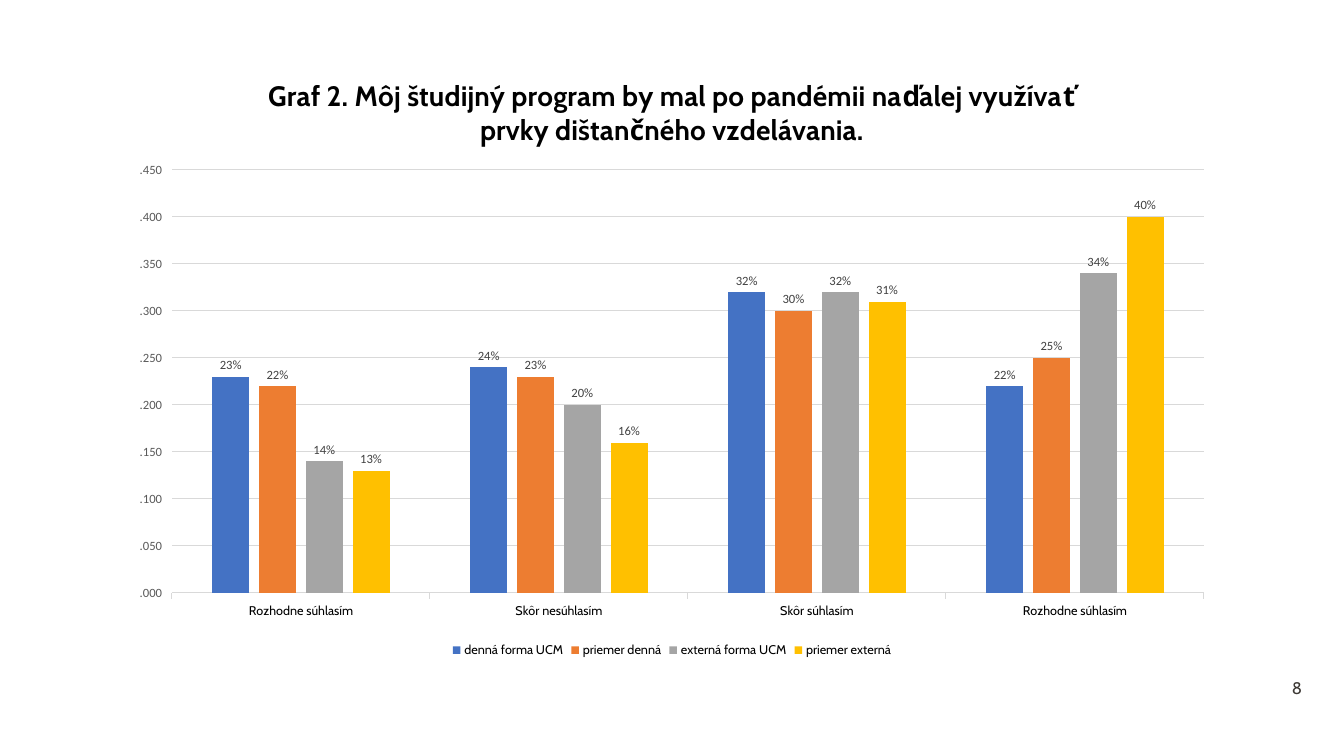
from lxml.etree import fromstring
from pptx import Presentation
from pptx.chart.data import CategoryChartData as Data
from pptx.dml.color import RGBColor as Rgb
from pptx.enum.chart import XL_CHART_TYPE as Kind
from pptx.enum.chart import XL_LABEL_POSITION as Spot
from pptx.enum.chart import XL_LEGEND_POSITION as Side
from pptx.enum.chart import XL_TICK_MARK as Tick
from pptx.enum.text import MSO_ANCHOR as Anchor
from pptx.enum.text import PP_ALIGN as Align
from pptx.oxml.ns import nsdecls
from pptx.util import Pt

SCALE = 914400 / 100.8
HUES = {
    "black": "000000", "page": "3D3935", "value": "595959",
    "label": "404040", "grid": "D9D9D9", "blue": "4472C4",
    "orange": "ED7D31", "gray": "A5A5A5", "gold": "FFC000",
}
TITLE = ("Graf 2. Môj študijný program by mal po pandémii naďalej "
         "využívať prvky dištančného vzdelávania.")
CATS = ["Rozhodne súhlasím", "Skôr nesúhlasím", "Skôr súhlasím", "Rozhodne súhlasím"]
FORMS = [
    ("denná forma UCM", "blue", (0.23, 0.24, 0.32, 0.22)),
    ("priemer denná", "orange", (0.22, 0.23, 0.30, 0.25)),
    ("externá forma UCM", "gray", (0.14, 0.20, 0.32, 0.34)),
    ("priemer externá", "gold", (0.13, 0.16, 0.31, 0.40)),
]


def px(*nums):
    return [round(n * SCALE) for n in nums]


def hue(name):
    return Rgb.from_string(HUES[name])


def style(font, size, name, face="Cabin", bold=False):
    font.size = Pt(size)
    font.name = face
    font.bold = bold
    font.color.rgb = hue(name)


def rule(line):
    line.color.rgb = hue("grid")
    line.width = Pt(0.75)


def add_page(slide, box, text):
    frame = slide.shapes.add_textbox(*px(*box)).text_frame
    frame.word_wrap = True
    frame.vertical_anchor = Anchor.MIDDLE
    para = frame.paragraphs[0]
    para.alignment = Align.RIGHT
    run = para.add_run()
    run.text = text
    style(run.font, 12, "page")


def set_title(chart, text):
    chart.has_title = True
    run = chart.chart_title.text_frame.paragraphs[0].add_run()
    run.text = text
    style(run.font, 20, "black", bold=True)
    chart.chart_title.include_in_layout = False


def set_axes(chart):
    cat = chart.category_axis
    cat.major_tick_mark = Tick.OUTSIDE
    cat.has_major_gridlines = False
    rule(cat.format.line)
    style(cat.tick_labels.font, 9, "black")
    val = chart.value_axis
    val.minimum_scale, val.maximum_scale, val.major_unit = 0, 0.45, 0.05
    val.major_tick_mark = Tick.OUTSIDE
    val.format.line.fill.background()
    rule(val.major_gridlines.format.line)
    val.tick_labels.number_format = "#.##0;\\-#.##0"
    val.tick_labels.number_format_is_linked = False
    style(val.tick_labels.font, 9, "value", "Calibri")


def set_bars(plot):
    plot.gap_width = 219
    plot.overlap = -27
    plot.vary_by_categories = False
    for bars, (_, name, _) in zip(plot.series, FORMS):
        bars.format.fill.solid()
        bars.format.fill.fore_color.rgb = hue(name)
        tags = bars.data_labels
        tags.show_value = True
        tags.position = Spot.OUTSIDE_END
        tags.number_format = "0%"
        tags.number_format_is_linked = False
        style(tags.font, 9, "label", "Calibri")


def set_area(plot, box, outer):
    left, top, wide, high = outer
    parts = {
        "x": (box[0] - left) / wide, "y": (box[1] - top) / high,
        "w": box[2] / wide, "h": box[3] / high,
    }
    modes = "".join(f'<c:{k}Mode val="edge"/>' for k in "xy")
    sizes = "".join(f'<c:{k} val="{v:.4f}"/>' for k, v in parts.items())
    area = plot._element.getparent()
    for old in area.findall("{*}layout"):
        area.remove(old)
    area.insert(0, fromstring(
        f'<c:layout {nsdecls("c")}><c:manualLayout><c:layoutTarget val="inner"/>'
        f"{modes}{sizes}</c:manualLayout></c:layout>"))


def add_bars(slide, box, inner):
    data = Data(number_format="0%")
    data.categories = CATS
    for name, _, vals in FORMS:
        data.add_series(name, vals)
    chart = slide.shapes.add_chart(Kind.COLUMN_CLUSTERED, *px(*box), data).chart
    style(chart.font, 10, "black", "Calibri")
    set_title(chart, TITLE)
    set_axes(chart)
    set_bars(chart.plots[0])
    set_area(chart.plots[0], inner, box)
    chart.has_legend = True
    chart.legend.position = Side.BOTTOM
    chart.legend.include_in_layout = False
    style(chart.legend.font, 9, "black")


def main():
    deck = Presentation()
    deck.slide_width, deck.slide_height = px(1344, 756)
    slide = deck.slides.add_slide(deck.slide_layouts[6])
    add_page(slide, (1235, 672, 77, 32), "8")
    add_bars(slide, (118, 53, 1108, 609), (172, 170, 1032, 423))
    deck.save("out.pptx")


if __name__ == "__main__":
    main()
